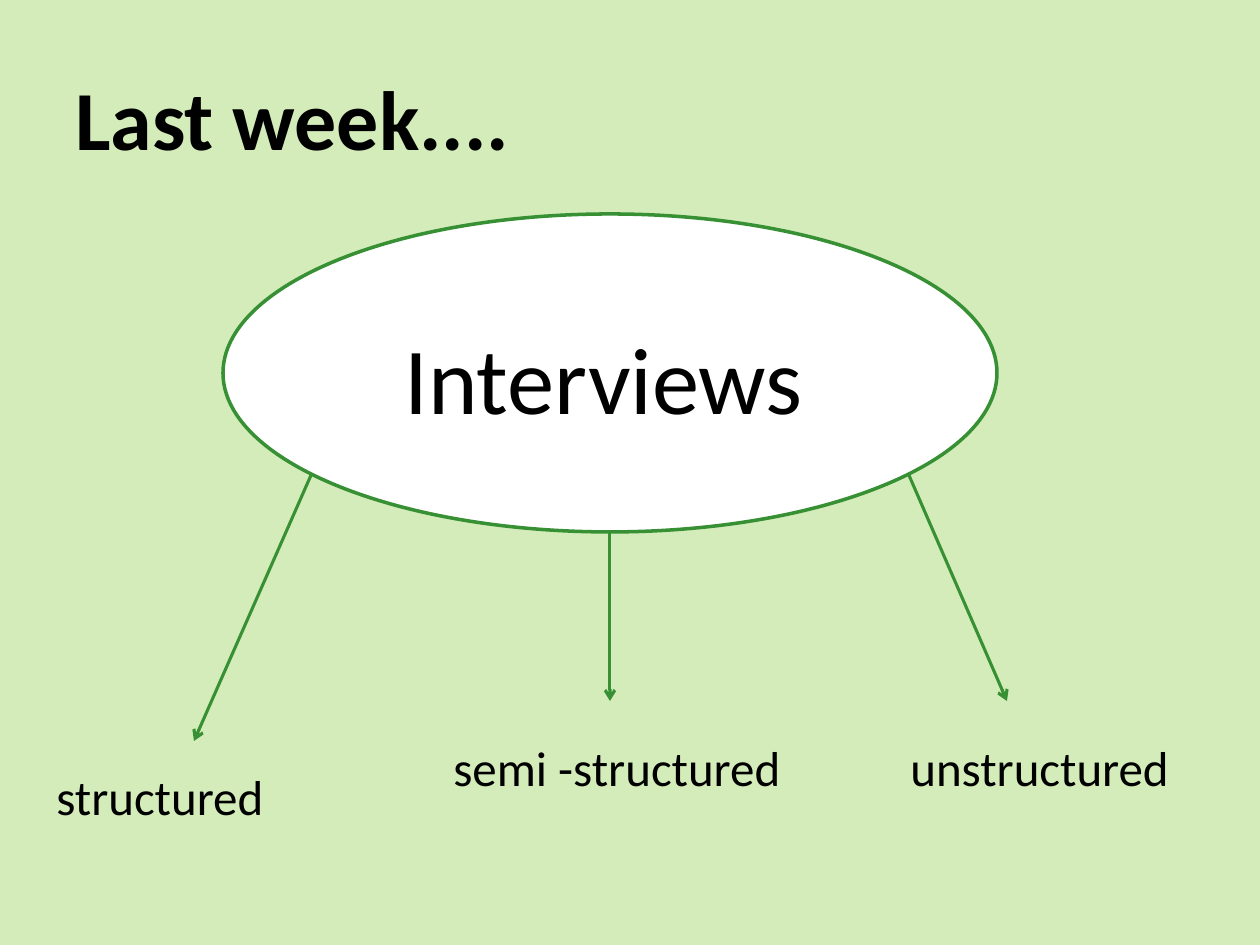
from dataclasses import dataclass

from lxml.etree import SubElement
from pptx import Presentation
from pptx.dml.color import RGBColor
from pptx.enum.shapes import MSO_CONNECTOR, MSO_SHAPE
from pptx.enum.text import MSO_ANCHOR
from pptx.oxml.ns import qn
from pptx.slide import Slide
from pptx.util import Emu, Pt

PX_PER_INCH = 126


@dataclass(frozen=True)
class Theme:
    font: str = "Calibri"
    background: RGBColor = RGBColor(0xD3, 0xEC, 0xB9)
    text: RGBColor = RGBColor(0, 0, 0)
    topic_fill: RGBColor = RGBColor(0xFF, 0xFF, 0xFF)
    line: RGBColor = RGBColor(0x38, 0x90, 0x34)
    title_size: int = 48
    topic_size: int = 54
    type_size: int = 28
    outline_width: float = 2
    arrow_width: float = 1.75


@dataclass(frozen=True)
class Box:
    left: int
    top: int
    width: int
    height: int


@dataclass(frozen=True)
class Label:
    text: str
    box: Box
    size: int
    bold: bool = False
    anchor: MSO_ANCHOR = MSO_ANCHOR.TOP


@dataclass(frozen=True)
class Arrow:
    start: tuple[int, int]
    end: tuple[int, int]


THEME = Theme()
TOPIC_OVAL = Box(223, 214, 774, 318)
LABELS = [
    Label("Last week....", Box(63, 38, 1134, 158), THEME.title_size, True, MSO_ANCHOR.MIDDLE),
    Label("Interviews", Box(392, 314, 456, 127), THEME.topic_size),
    Label("structured", Box(44, 760, 287, 72), THEME.type_size),
    Label("semi -structured", Box(441, 731, 367, 72), THEME.type_size),
    Label("unstructured", Box(898, 731, 287, 72), THEME.type_size),
]
ARROWS = [
    Arrow((312, 473), (194, 741)),
    Arrow((610, 532), (610, 701)),
    Arrow((908, 473), (1007, 701)),
]


def px(n: int) -> Emu:
    return Emu(round(n * 914400 / PX_PER_INCH))


def place(box: Box) -> tuple[Emu, Emu, Emu, Emu]:
    """Give left, top, width and height in EMU."""
    return px(box.left), px(box.top), px(box.width), px(box.height)


def draw_oval(s: Slide, box: Box) -> None:
    sp = s.shapes.add_shape(MSO_SHAPE.OVAL, *place(box))
    sp.shadow.inherit = False
    sp.fill.solid()
    sp.fill.fore_color.rgb = THEME.topic_fill
    sp.line.color.rgb = THEME.line
    sp.line.width = Pt(THEME.outline_width)


def draw_label(s: Slide, label: Label) -> None:
    tf = s.shapes.add_textbox(*place(label.box)).text_frame
    tf.word_wrap = True
    tf.vertical_anchor = label.anchor
    p = tf.paragraphs[0]
    p.text = label.text
    p.font.name = THEME.font
    p.font.size = Pt(label.size)
    p.font.bold = label.bold
    p.font.color.rgb = THEME.text


def draw_arrow(s: Slide, arrow: Arrow) -> None:
    ends = [px(n) for n in (*arrow.start, *arrow.end)]
    cxn = s.shapes.add_connector(MSO_CONNECTOR.STRAIGHT, *ends)
    cxn.line.color.rgb = THEME.line
    cxn.line.width = Pt(THEME.arrow_width)
    SubElement(cxn.line._get_or_add_ln(), qn("a:tailEnd"), type="arrow")
    SubElement(cxn._element.spPr, qn("a:effectLst"))


def main() -> None:
    prs = Presentation()
    prs.slide_width, prs.slide_height = px(1260), px(945)
    s = prs.slides.add_slide(prs.slide_layouts[6])
    s.background.fill.solid()
    s.background.fill.fore_color.rgb = THEME.background
    draw_oval(s, TOPIC_OVAL)
    for arrow in ARROWS:
        draw_arrow(s, arrow)
    for label in LABELS:
        draw_label(s, label)
    prs.save("out.pptx")


if __name__ == "__main__":
    main()
